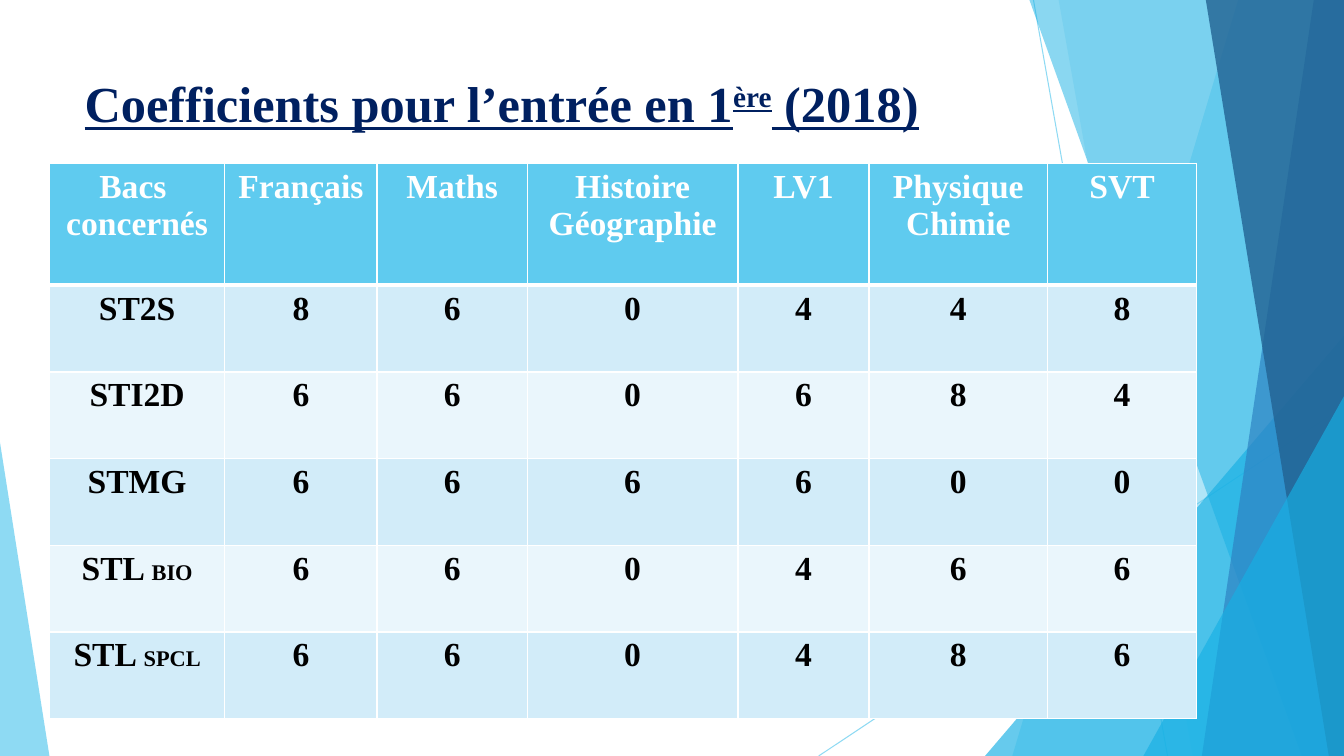
"""Builds the slide of subject coefficients for each technological track."""
from lxml.etree import SubElement
from pptx import Presentation
from pptx.dml.color import RGBColor
from pptx.enum.shapes import MSO_CONNECTOR, MSO_SHAPE
from pptx.enum.text import MSO_ANCHOR, PP_ALIGN
from pptx.oxml.ns import qn
from pptx.util import Inches, Pt

COLORS = {
    "sky": "5FCBEF", "cyan": "17B0E4", "blue": "2E83C3", "deep": "226292",
    "navy": "002060", "white": "FFFFFF", "black": "000000",
    "odd": "D2ECF9", "even": "EAF6FC",
}
WIDE, HIGH = 13.33, 7.5
RAYS = [((10.25, 0), (11.58, HIGH)), ((WIDE, 4.03), (8.12, HIGH))]
SHARDS = [
    ("band", (12.28, 10.04), "sky", 36),
    ("band", (10.5, 11.83), "sky", 20),
    ("peak", (9.77, 3.33, 3.56, 4.17, 1), "cyan", 66),
    ("band", (10.21, 12.91), "cyan", 50),
    ("band", (13.03, 11.92), "blue", 70),
    ("band", (11.96, 13.18), "deep", 80),
    ("peak", (11.34, 3.93, 1.99, 3.57, 1), "cyan", 66),
    ("peak", (0, 4.39, 0.49, 3.11, 0), "sky", 70),
]
TITLE = [("Coefficients pour l’entrée en 1", 0), ("ère", 30000), (" (2018)", 0)]
HEADS = ["Bacs \nconcernés", "Français", "Maths", "Histoire\nGéographie",
         "LV1", "Physique\nChimie", "SVT"]
TRACKS = [
    ("ST2S", "", (8, 6, 0, 4, 4, 8)),
    ("STI2D", "", (6, 6, 0, 6, 8, 4)),
    ("STMG", "", (6, 6, 6, 6, 0, 0)),
    ("STL ", "BIO", (6, 6, 0, 4, 6, 6)),
    ("STL ", "SPCL", (6, 6, 0, 4, 8, 6)),
]
WIDTHS = [1.74, 1.51, 1.49, 2.09, 1.3, 1.77, 1.48]
HEAD_HIGH, ROW_HIGH = 1.21, 0.86
FACE = {"name": "Times New Roman", "bold": True}
FRAME = {"word_wrap": True, "vertical_anchor": MSO_ANCHOR.TOP}
PLAIN = {"first_row": False, "horz_banding": False}


def apply(item, values):
    for key, value in values.items():
        setattr(item, key, value)


def rgb(name):
    return RGBColor.from_string(COLORS[name])


def fade(shape, alpha):
    for tint in shape._element.spPr.iter(qn("a:srgbClr")):
        SubElement(tint, qn("a:alpha"), val=str(alpha * 1000))


def write(para, text, size, color, **more):
    run = para.add_run()
    run.text = text
    apply(run.font, {**FACE, "size": Pt(size), **more})
    run.font.color.rgb = rgb(color)
    return run


def add_ray(shapes, start, end):
    ends = [Inches(value) for value in start + end]
    ray = shapes.add_connector(MSO_CONNECTOR.STRAIGHT, *ends)
    ray.line.color.rgb = rgb("sky")
    ray.line.width = Pt(0.75)
    fade(ray, 70)
    SubElement(ray._element.spPr, qn("a:effectLst"))


def add_shard(shapes, kind, place, color, alpha):
    if kind == "band":
        top, low = place
        form = shapes.build_freeform(Inches(top), 0)
        spots = [(WIDE, 0), (WIDE, HIGH), (low, HIGH)]
        form.add_line_segments([(Inches(x), Inches(y)) for x, y in spots])
        shard = form.convert_to_shape()
    else:
        box = [Inches(value) for value in place[:4]]
        shard = shapes.add_shape(MSO_SHAPE.ISOSCELES_TRIANGLE, *box)
        shard.adjustments[0] = place[4]
    shard.shadow.inherit = False
    shard.fill.solid()
    shard.fill.fore_color.rgb = rgb(color)
    shard.line.fill.background()
    fade(shard, alpha)


def add_title(shapes):
    box = [Inches(value) for value in (0.74, 0.67, 9.4, 1.44)]
    frame = shapes.add_textbox(*box).text_frame
    apply(frame, FRAME)
    for text, base in TITLE:
        run = write(frame.paragraphs[0], text, 36, "navy", underline=True)
        if base:
            run._r.get_or_add_rPr().set("baseline", str(base))


def edge(cell, row):
    widths = {"L": 1, "R": 1, "T": 3 if row == 1 else 1, "B": 1 if row else 3}
    for side, width in widths.items():
        line = SubElement(cell._tc.get_or_add_tcPr(), qn("a:ln" + side),
                          w=str(Pt(width)))
        fill = SubElement(line, qn("a:solidFill"))
        SubElement(fill, qn("a:srgbClr"), val=COLORS["white"])


def add_cell(cell, row, text, note=""):
    edge(cell, row)
    cell.fill.solid()
    shade = ("odd" if row % 2 else "even") if row else "sky"
    cell.fill.fore_color.rgb = rgb(shade)
    frame = cell.text_frame
    for spot, line in enumerate(text.split("\n")):
        para = frame.add_paragraph() if spot else frame.paragraphs[0]
        para.alignment = PP_ALIGN.CENTER
        write(para, line, 24, "black" if row else "white")
    if note:
        write(para, note, 16, "black")


def add_grid(shapes):
    highs = [HEAD_HIGH] + [ROW_HIGH] * len(TRACKS)
    box = [Inches(v) for v in (0.49, 1.62, sum(WIDTHS), sum(highs))]
    grid = shapes.add_table(len(highs), len(WIDTHS), *box).table
    apply(grid, PLAIN)
    for col, width in zip(grid.columns, WIDTHS):
        col.width = Inches(width)
    for row, high in zip(grid.rows, highs):
        row.height = Inches(high)
    for col, head in enumerate(HEADS):
        add_cell(grid.cell(0, col), 0, head)
    for row, (track, note, marks) in enumerate(TRACKS, 1):
        add_cell(grid.cell(row, 0), row, track, note)
        for col, mark in enumerate(marks, 1):
            add_cell(grid.cell(row, col), row, str(mark))


def main():
    deck = Presentation()
    apply(deck, {"slide_width": Inches(WIDE), "slide_height": Inches(HIGH)})
    shapes = deck.slides.add_slide(deck.slide_layouts[6]).shapes
    for start, end in RAYS:
        add_ray(shapes, start, end)
    for shard in SHARDS:
        add_shard(shapes, *shard)
    add_title(shapes)
    add_grid(shapes)
    deck.save("out.pptx")


if __name__ == "__main__":
    main()
